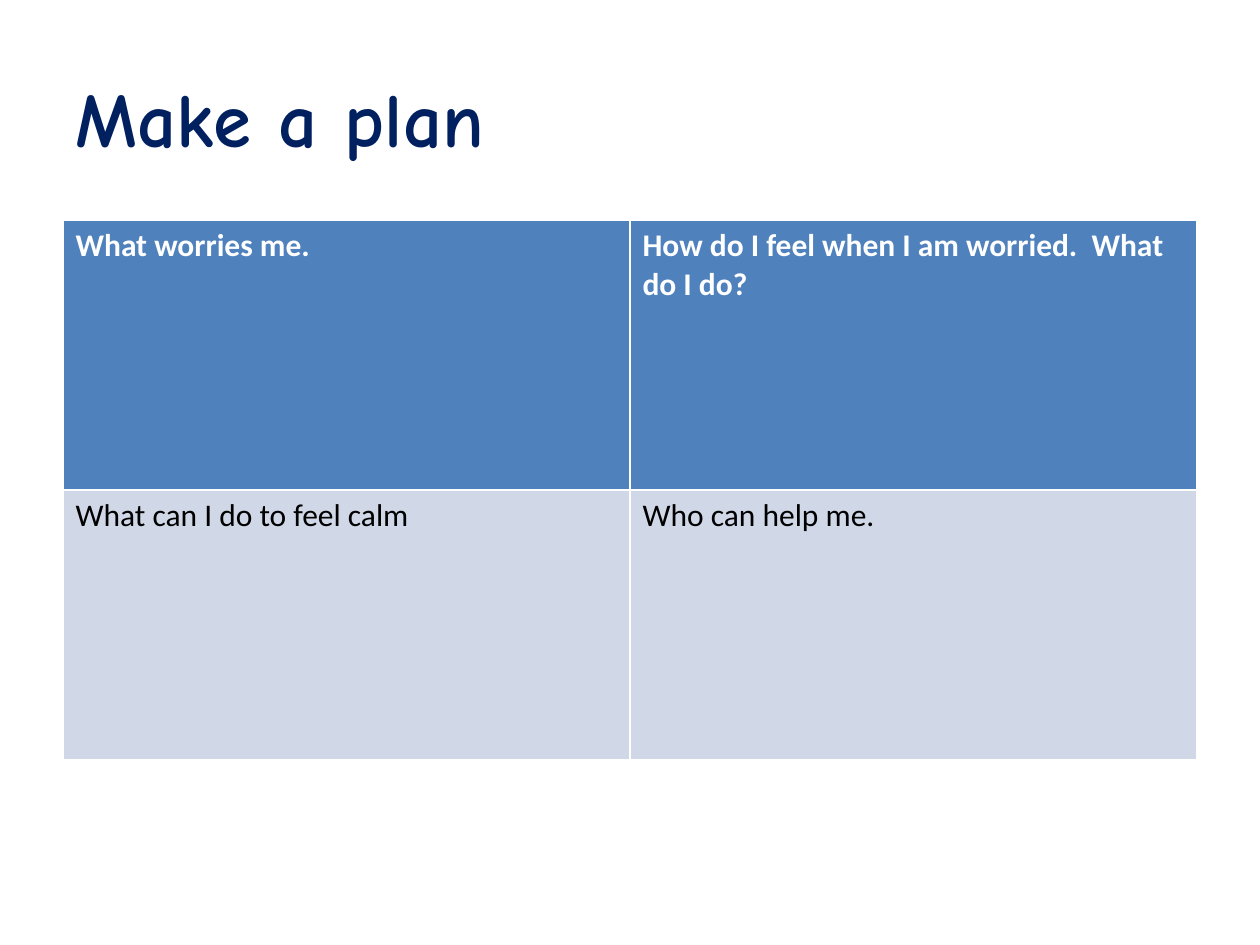
from dataclasses import dataclass

from pptx import Presentation
from pptx.dml.color import RGBColor
from pptx.enum import text
from pptx.util import Inches, Pt


@dataclass(frozen=True)
class Theme:
    title_font: str = "Comic Neue"
    body_font: str = "Calibri"
    title_size: int = 44
    body_size: int = 18
    title_color: str = "002060"
    text_colors: tuple = ("FFFFFF", "000000")
    row_fills: tuple = ("4F81BD", "D0D8E8")


def style_text(paragraph, name, size, color, bold):
    paragraph.alignment = text.PP_ALIGN.LEFT
    for run in paragraph.runs:
        run.font.name = name
        run.font.size = Pt(size)
        run.font.color.rgb = RGBColor.from_string(color)
        run.font.bold = bold


theme = Theme()
plan_rows = [
    ["What worries me.", "How do I feel when I am worried.  What do I do?"],
    ["What can I do to feel calm", "Who can help me."],
]

presentation = Presentation()
presentation.slide_width = Inches(10)
presentation.slide_height = Inches(7.5)
slide = presentation.slides.add_slide(presentation.slide_layouts[5])

title = slide.shapes.title
title.left, title.top = Inches(0.5), Inches(0.3)
title.width, title.height = Inches(9), Inches(1.25)
title.text_frame.text = "Make a plan"
title.text_frame.vertical_anchor = text.MSO_ANCHOR.MIDDLE
style_text(title.text_frame.paragraphs[0], theme.title_font, theme.title_size,
           theme.title_color, True)

plan_table = slide.shapes.add_table(
    2, 2, Inches(0.5), Inches(1.75), Inches(9), Inches(4.28)).table

for row_index, row_texts in enumerate(plan_rows):
    for column_index, cell_text in enumerate(row_texts):
        cell = plan_table.cell(row_index, column_index)
        cell.text_frame.text = cell_text
        cell.fill.solid()
        cell.fill.fore_color.rgb = RGBColor.from_string(theme.row_fills[row_index])
        style_text(cell.text_frame.paragraphs[0], theme.body_font, theme.body_size,
                   theme.text_colors[row_index], row_index == 0)

presentation.save("out.pptx")
